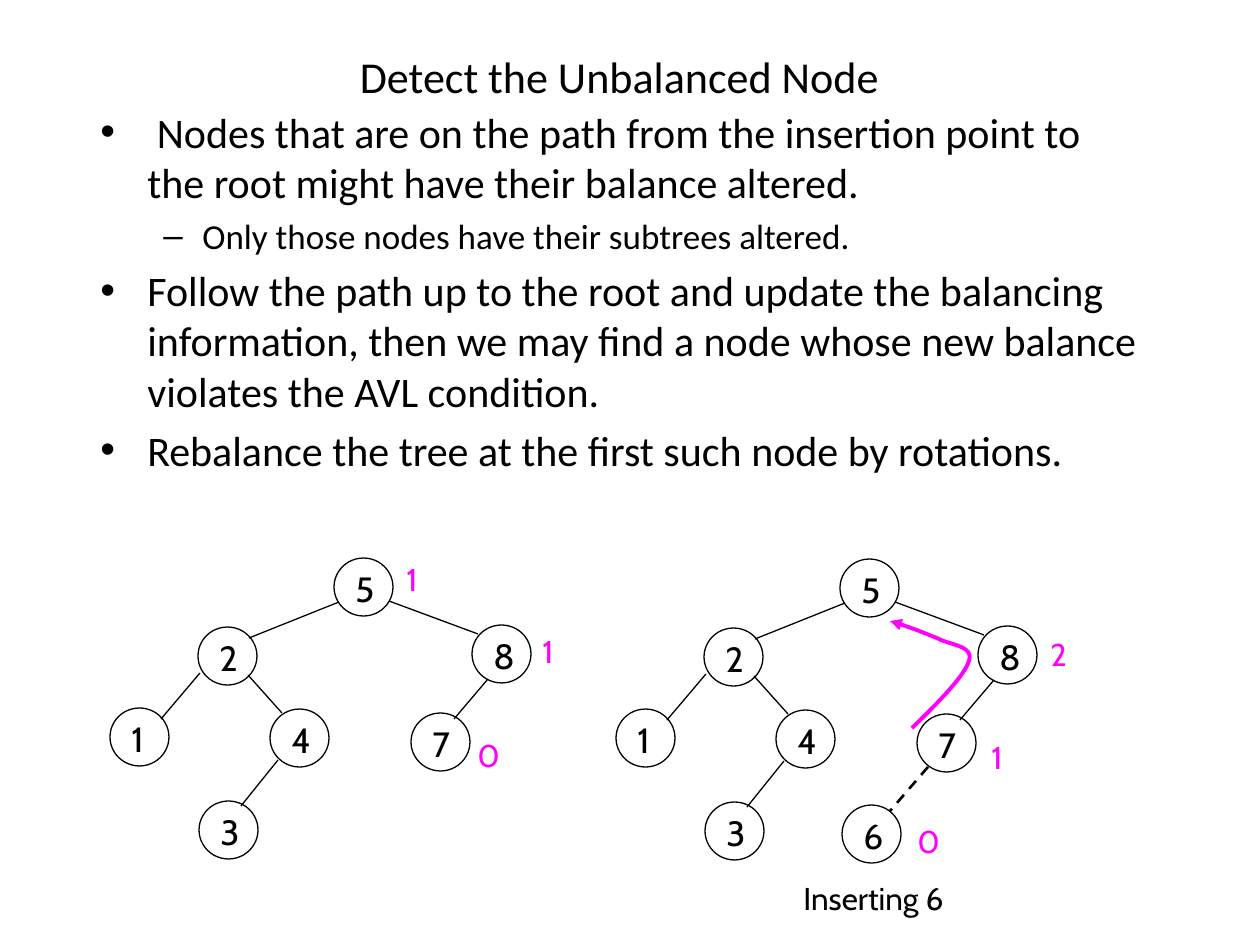
from dataclasses import dataclass

import pptx
import pptx.dml.color
import pptx.enum.dml
import pptx.enum.shapes
import pptx.enum.text
import pptx.util
from lxml import etree
from pptx.oxml.ns import qn

PX = 914400 / 126


def emu(px):
    return pptx.util.Emu(round(px * PX))


@dataclass(frozen=True)
class Theme:
    ink: str = "000000"
    balance: str = "FF00FF"
    text_font: str = "Calibri"
    tree_font: str = "Cabin"
    title: float = 25.2
    bullet: float = 24
    sub_bullet: float = 20
    key: float = 20
    note: float = 18
    thin: float = 0.75
    dashed: float = 1.5
    thick: float = 2.25


class Deck:
    def __init__(self, theme):
        self.theme = theme
        self.prs = pptx.Presentation()
        self.prs.slide_width, self.prs.slide_height = emu(1260), emu(945)
        self.slide = self.prs.slides.add_slide(self.prs.slide_layouts[6])

    def style_font(self, paragraph, size, face, color):
        font = paragraph.font
        font.size, font.name = pptx.util.Pt(size), face
        font.color.rgb = pptx.dml.color.RGBColor.from_string(color)

    def style_line(self, shape, color, width):
        shape.line.color.rgb = pptx.dml.color.RGBColor.from_string(color)
        shape.line.width = pptx.util.Pt(width)

    def title(self, text, left, top, width, height):
        frame = self.slide.shapes.add_textbox(*map(emu, (left, top, width, height))).text_frame
        frame.word_wrap = True
        frame.vertical_anchor = pptx.enum.text.MSO_ANCHOR.MIDDLE
        heading = frame.paragraphs[0]
        heading.text = text
        heading.alignment = pptx.enum.text.PP_ALIGN.CENTER
        self.style_font(heading, self.theme.title, self.theme.text_font, self.theme.ink)

    def bullets(self, items, left, top, width, height):
        levels = (
            ("•", 47, -47, self.theme.bullet),
            ("–", 102, -39, self.theme.sub_bullet),
        )
        frame = self.slide.shapes.add_textbox(*map(emu, (left, top, width, height))).text_frame
        frame.word_wrap = True
        for index, (level, text) in enumerate(items):
            mark, margin, indent, size = levels[level]
            point = frame.add_paragraph() if index else frame.paragraphs[0]
            point.text, point.level = text, level
            point.space_before = pptx.util.Pt(size * 0.2)
            props = point._p.get_or_add_pPr()
            props.set("marL", str(emu(margin)))
            props.set("indent", str(emu(indent)))
            etree.SubElement(props, qn("a:buFont")).set("typeface", "Arial")
            etree.SubElement(props, qn("a:buChar")).set("char", mark)
            self.style_font(point, size, self.theme.text_font, self.theme.ink)

    def label(self, shapes, text, left, top, width, height, size, color):
        frame = shapes.add_textbox(*map(emu, (left, top, width, height))).text_frame
        frame.word_wrap = False
        frame.auto_size = pptx.enum.text.MSO_AUTO_SIZE.SHAPE_TO_FIT_TEXT
        frame.paragraphs[0].text = text
        self.style_font(frame.paragraphs[0], size, self.theme.tree_font, color)

    def node(self, shapes, key, left, top):
        circle = shapes.add_shape(
            pptx.enum.shapes.MSO_SHAPE.OVAL, *map(emu, (left, top, 59, 58)))
        circle.shadow.inherit = False
        circle.fill.background()
        self.style_line(circle, self.theme.ink, self.theme.thin)
        self.label(shapes, key, left + 9, top + 3, 44, 54, self.theme.key, self.theme.ink)

    def edge(self, shapes, ends, dashed=False):
        line = shapes.add_connector(
            pptx.enum.shapes.MSO_CONNECTOR.STRAIGHT, *map(emu, ends))
        self.style_line(line, self.theme.ink, self.theme.dashed if dashed else self.theme.thin)
        if dashed:
            line.line.dash_style = pptx.enum.dml.MSO_LINE.DASH
        etree.SubElement(line._element.spPr, qn("a:effectLst"))

    def tree(self, nodes, edges, dx=0, dy=0):
        shapes = self.slide.shapes.add_group_shape().shapes
        for key, (left, top) in nodes.items():
            self.node(shapes, key, left + dx, top + dy)
        for pair, (x1, y1, x2, y2) in edges.items():
            self.edge(shapes, (x1 + dx, y1 + dy, x2 + dx, y2 + dy), dashed=pair == "7-6")
        return shapes

    def curved_arrow(self, start, curves, steps=16):
        points = [start]
        for c1, c2, end in curves:
            corners = (points[-1], c1, c2, end)
            for step in range(1, steps + 1):
                t = step / steps
                weights = ((1 - t) ** 3, 3 * t * (1 - t) ** 2, 3 * t * t * (1 - t), t ** 3)
                points.append(tuple(
                    sum(w * corner[axis] for w, corner in zip(weights, corners))
                    for axis in (0, 1)))
        outline = [(emu(x), emu(y)) for x, y in points]
        builder = self.slide.shapes.build_freeform(*outline[0])
        builder.add_line_segments(outline[1:], close=False)
        arrow = builder.convert_to_shape()
        arrow.shadow.inherit = False
        arrow.fill.background()
        self.style_line(arrow, self.theme.balance, self.theme.thick)
        etree.SubElement(arrow.line._get_or_add_ln(), qn("a:tailEnd")).set("type", "triangle")


def main():
    theme = Theme()
    deck = Deck(theme)

    # Heading and explanation
    deck.title("Detect the Unbalanced Node", 84, 42, 1071, 67)
    deck.bullets((
        (0, " Nodes that are on the path from the insertion point to the root "
            "might have their balance altered."),
        (1, "Only those nodes have their subtrees altered."),
        (0, "Follow the path up to the root and update the balancing information, "
            "then we may find a node whose new balance violates the AVL condition."),
        (0, "Rebalance the tree at the first such node by rotations."),
    ), 88, 100, 1071, 813)

    # Tree before the insertion
    nodes = {
        "5": (334, 558), "2": (198, 627), "1": (110, 708), "4": (270, 709),
        "3": (199, 801), "8": (472, 625), "7": (411, 713),
    }
    edges = {
        "2-1": (200, 673, 161, 719), "2-4": (248, 675, 282, 713),
        "4-3": (278, 760, 241, 806), "8-7": (488, 679, 454, 719),
        "5-2": (339, 602, 249, 638), "5-8": (389, 601, 478, 634),
    }
    deck.tree(nodes, edges)

    # The same tree after 6 is inserted
    after = deck.tree(
        nodes | {"6": (336, 804)}, edges | {"7-6": (422, 766, 384, 810)}, dx=506, dy=1)
    deck.label(after, "Inserting 6", 791, 873, 176, 50, theme.note, theme.ink)

    # Balance values beside the nodes
    balances = (
        ("0", 465, 730), ("1", 530, 626), ("1", 394, 554),
        ("0", 905, 816), ("1", 979, 732), ("2", 1038, 629),
    )
    for value, left, top in balances:
        deck.label(deck.slide.shapes, value, left, top, 43, 50, theme.note, theme.balance)

    # Way up from the inserted node to the root
    deck.curved_arrow((912, 728), (
        ((939, 702), (965, 675), (969, 661)),
        ((974, 646), (951, 645), (939, 639)),
        ((925, 633), (907, 626), (890, 621)),
    ))

    deck.prs.save("out.pptx")


if __name__ == "__main__":
    main()
